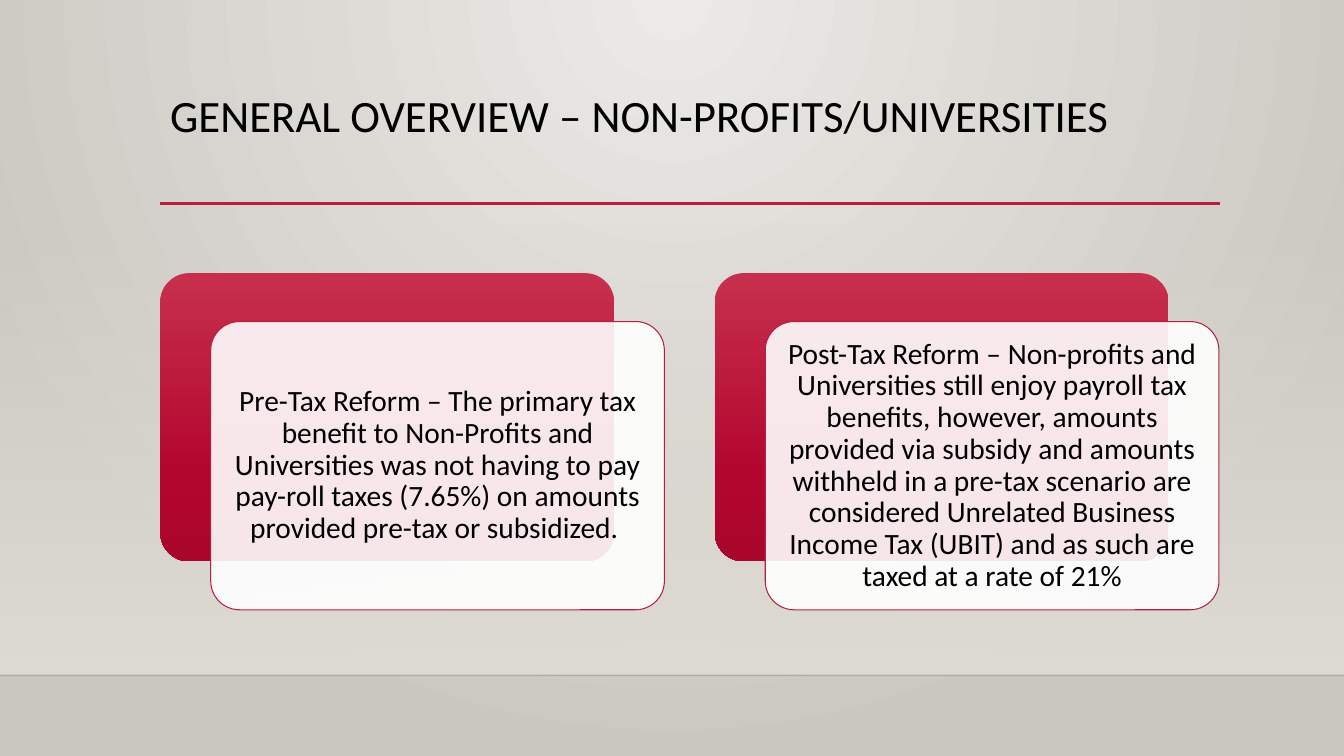
from lxml import etree
from pptx import Presentation
from pptx.dml.color import RGBColor
from pptx.enum.shapes import MSO_CONNECTOR as CONN, MSO_SHAPE as SHAPE
from pptx.enum.text import MSO_ANCHOR as ANCHOR, PP_ALIGN as ALIGN
from pptx.oxml.ns import qn
from pptx.util import Inches, Pt

BLACK, WHITE, CRIMSON = "000000", "FFFFFF", "B71E42"
CARD_STOPS = [(0, "C7304C", 100), (69, "B3062F", 100), (100, "AA062C", 100)]
CARDS = [
    "Pre-Tax Reform – The primary tax benefit to Non-Profits and Universities "
    "was not having to pay pay-roll taxes (7.65%) on amounts provided pre-tax "
    "or subsidized. ",
    "Post-Tax Reform – Non-profits and Universities still enjoy payroll tax "
    "benefits, however, amounts provided via subsidy and amounts withheld in a "
    "pre-tax scenario are considered Unrelated Business Income Tax (UBIT) and "
    "as such are taxed at a rate of 21%",
]


def rgb(value):
    return RGBColor.from_string(value)


def set_alpha(parent, percent):
    """Set the opacity of the first colour under parent."""
    color = parent.find(".//" + qn("a:srgbClr"))
    etree.SubElement(color, qn("a:alpha"), val=str(percent * 1000))


def set_gradient(fill, holder, stops, radial=None):
    """Fill with (position, colour, opacity) stops, top down or radial."""
    fill.gradient()
    grad = holder.find(".//" + qn("a:gradFill"))
    for child in list(grad):
        grad.remove(child)
    gs_list = etree.SubElement(grad, qn("a:gsLst"))
    for pos, color, opacity in stops:
        gs = etree.SubElement(gs_list, qn("a:gs"), pos=str(pos * 1000))
        etree.SubElement(gs, qn("a:srgbClr"), val=color)
        if opacity < 100:
            set_alpha(gs, opacity)
    if radial:
        shade = etree.SubElement(grad, qn("a:path"), path="circle")
        sides = {side: str(v * 1000) for side, v in zip("ltrb", radial)}
        etree.SubElement(shade, qn("a:fillToRect"), **sides)
    else:
        etree.SubElement(grad, qn("a:lin"), ang="5400000", scaled="0")


def write(tf, text, size=21, color=BLACK, font="Calibri", align=ALIGN.LEFT):
    p = tf.paragraphs[0]
    p.alignment = align
    p.line_spacing = 0.9
    r = p.add_run()
    r.text = text
    r.font.size, r.font.name = Pt(size), font
    r.font.color.rgb = rgb(color)


class SlideBuilder:
    def __init__(self, prs):
        self.slide = prs.slides.add_slide(prs.slide_layouts[6])

    def background(self, stops, radial):
        set_gradient(self.slide.background.fill, self.slide.element, stops, radial)

    def box(self, x, y, w, h, kind=SHAPE.RECTANGLE, stops=None, fill=WHITE,
            opacity=100, line=None):
        s = self.slide.shapes.add_shape(kind, Inches(x), Inches(y), Inches(w), Inches(h))
        s.shadow.inherit = False
        if stops:
            set_gradient(s.fill, s.element, stops)
        else:
            s.fill.solid()
            s.fill.fore_color.rgb = rgb(fill)
            set_alpha(s.element, opacity)
        if line:
            s.line.color.rgb = rgb(line)
            s.line.width = Pt(0.75)
        else:
            s.line.fill.background()
        if kind == SHAPE.ROUNDED_RECTANGLE:
            s.adjustments[0] = 0.1

    def rule(self, x1, x2, y, color, width, opacity=100):
        c = self.slide.shapes.add_connector(
            CONN.STRAIGHT, Inches(x1), Inches(y), Inches(x2), Inches(y))
        c.line.color.rgb = rgb(color)
        c.line.width = Pt(width)
        set_alpha(c.element, opacity)
        c.element.spPr.append(etree.Element(qn("a:effectLst")))

    def text(self, x, y, w, h, text, anchor=ANCHOR.TOP, inset=None, **fmt):
        tb = self.slide.shapes.add_textbox(Inches(x), Inches(y), Inches(w), Inches(h))
        tf = tb.text_frame
        tf.word_wrap = True
        tf.vertical_anchor = anchor
        if inset is not None:
            tf.margin_left = tf.margin_right = Inches(inset)
            tf.margin_top = tf.margin_bottom = Inches(inset)
        write(tf, text, **fmt)

    def card(self, x, y, text, w=4.5, h=2.86, pad=0.08):
        rounded = SHAPE.ROUNDED_RECTANGLE
        self.box(x, y, w, h, rounded, stops=CARD_STOPS)
        x, y = x + 0.5, y + 0.48
        self.box(x, y, w, h, rounded, opacity=90, line=CRIMSON)
        self.text(x + pad, y + pad, w - 2 * pad, h - 2 * pad, text,
                  anchor=ANCHOR.MIDDLE, inset=0.09, align=ALIGN.CENTER)


def main():
    prs = Presentation()
    prs.slide_width, prs.slide_height = Inches(13.33), Inches(7.5)
    sb = SlideBuilder(prs)

    # Backdrop with the floor edge
    sb.background([(0, "ECEAE7", 100), (100, "CAC7C1", 100)], (43, 0, 43, 100))
    sb.box(0, 2.21, 13.33, 4.49, stops=[(0, "DFDBD5", 0), (100, "DFDBD5", 100)])
    sb.rule(0, 13.33, 6.7, "000001", 1, opacity=20)

    # Title
    sb.rule(1.59, 12.1, 2.02, CRIMSON, 2.5)
    sb.text(1.59, 0.88, 10.5, 1.15, "GENERAL OVERVIEW – NON-PROFITS/UNIVERSITIES", size=32)

    # Cards
    for i, text in enumerate(CARDS):
        sb.card(1.59 + 5.5 * i, 2.71, text)

    prs.save("out.pptx")


if __name__ == "__main__":
    main()
